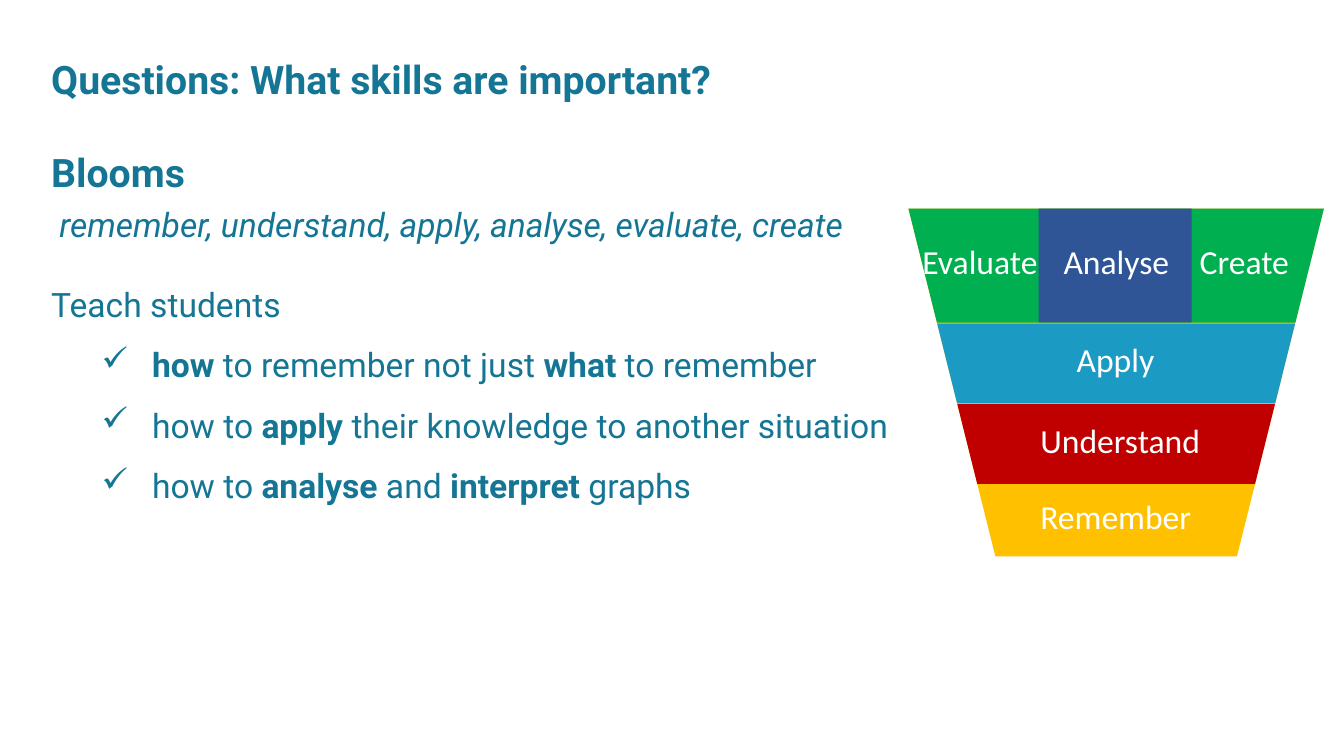
from lxml.etree import SubElement
from pptx import Presentation
from pptx.dml.color import RGBColor
from pptx.enum.shapes import MSO_SHAPE
from pptx.enum.text import MSO_ANCHOR, PP_ALIGN
from pptx.oxml.ns import qn
from pptx.util import Inches, Pt

COLORS = {"teal": "147694", "white": "FFFFFF", "remember": "FFC000",
          "understand": "C00000", "apply": "1B9BC3", "top": "00B050",
          "analyse": "2F5597"}
SLOPE = 0.25  # sideways inset of the funnel per inch of height
LABEL_HEIGHT = 0.5
LABEL_LIFT = 0.04

# Runs are (text, bold) pairs
LESSON = [
    {"runs": [("Questions: What skills are important?", True)], "size": 28},
    {"runs": [("Blooms", True)], "size": 28, "before": 33},
    {"runs": [("remember, understand, apply, analyse, evaluate, create", False)],
     "italic": True, "before": 6, "margin": 0.08},
    {"runs": [("Teach students", False)], "before": 28},
]
SKILLS = [
    [("how", True), (" to remember not just ", False), ("what", True),
     (" to remember", False)],
    [("how to ", False), ("apply", True),
     (" their knowledge to another situation", False)],
    [("how to ", False), ("analyse ", True), ("and", False),
     (" interpret ", True), ("graphs", False)],
]
# Level colour, top and bottom within the funnel, labels as (text, left, width)
LEVELS = [
    ("remember", 0, 3.45, []),
    ("understand", 1.94, 2.73, [("Understand", 1.21, 1.8)]),
    ("apply", 1.14, 1.93, [("Apply", 1.57, 0.98)]),
    ("top", 0, 1.13, [("Evaluate", 0.04, 1.36), ("Create", 2.79, 1.1)]),
]


def rgb(name):
    return RGBColor.from_string(COLORS[name])


def add_run(paragraph, text, color, **font_format):
    run = paragraph.add_run()
    run.text = text
    run.font.color.rgb = rgb(color)
    for attribute, value in font_format.items():
        setattr(run.font, attribute, value)


def add_filled(shapes, preset, color, box):
    shape = shapes.add_shape(preset, *map(Inches, box))
    shape.shadow.inherit = False
    shape.fill.solid()
    shape.fill.fore_color.rgb = rgb(color)
    shape.line.fill.background()
    return shape


def add_lesson_paragraph(paragraph, runs, size=24, italic=False, before=0,
                         margin=0, tick=False):
    paragraph.alignment = PP_ALIGN.LEFT
    paragraph.space_before = Pt(before)
    properties = paragraph._p.get_or_add_pPr()
    properties.set("marL", str(Inches(margin)))
    if tick:
        paragraph.level = 1
        paragraph.line_spacing = 1.5
        properties.set("indent", str(Inches(-0.5)))
        SubElement(properties, qn("a:buChar"), char="✓")
    for text, bold in runs:
        add_run(paragraph, text, "teal", name="Roboto", size=Pt(size),
                bold=bold, italic=italic)


def add_lesson(slide, box):
    frame = add_filled(slide.shapes, MSO_SHAPE.RECTANGLE, "white", box).text_frame
    frame.word_wrap = True
    frame.vertical_anchor = MSO_ANCHOR.TOP
    skills = [{"runs": runs, "margin": 1, "tick": True} for runs in SKILLS]
    for index, content in enumerate(LESSON + skills):
        paragraph = frame.add_paragraph() if index else frame.paragraphs[0]
        add_lesson_paragraph(paragraph, **content)


def add_label(shapes, text, left, width, middle):
    top = middle - LABEL_LIFT - LABEL_HEIGHT / 2
    label = shapes.add_textbox(*map(Inches, (left, top, width, LABEL_HEIGHT)))
    label.text_frame.word_wrap = False
    add_run(label.text_frame.paragraphs[0], text, "white", name="Calibri",
            size=Pt(24))


def add_funnel(slide, left, top, width):
    """Stack the levels so that their slanted sides line up."""
    shapes = slide.shapes.add_group_shape().shapes
    for color, start, end, labels in LEVELS:
        inset = SLOPE * start
        box = (left + inset, top + start, width - 2 * inset, end - start)
        level = add_filled(shapes, MSO_SHAPE.TRAPEZOID, color, box)
        level.adjustments[0] = SLOPE
        level.rotation = 180
        for text, offset, label_width in labels:
            add_label(shapes, text, left + offset, label_width,
                      top + (start + end) / 2)
    top_height = LEVELS[-1][2]
    add_filled(shapes, MSO_SHAPE.RECTANGLE, "analyse",
               (left + 1.29, top, 1.52, top_height))
    add_label(shapes, "Analyse", left + 1.44, 1.26, top + top_height / 2)
    remember_middle = (LEVELS[1][2] + LEVELS[0][2]) / 2
    add_label(shapes, "Remember", left + 1.21, 1.71, top + remember_middle)


def main():
    presentation = Presentation()
    presentation.slide_width = Inches(13.33)
    presentation.slide_height = Inches(7.5)
    slide = presentation.slides.add_slide(presentation.slide_layouts[6])
    add_lesson(slide, (0.41, 0.5, 11.99, 5.44))
    add_funnel(slide, 9.01, 2.07, 4.12)
    presentation.save("out.pptx")


if __name__ == "__main__":
    main()
